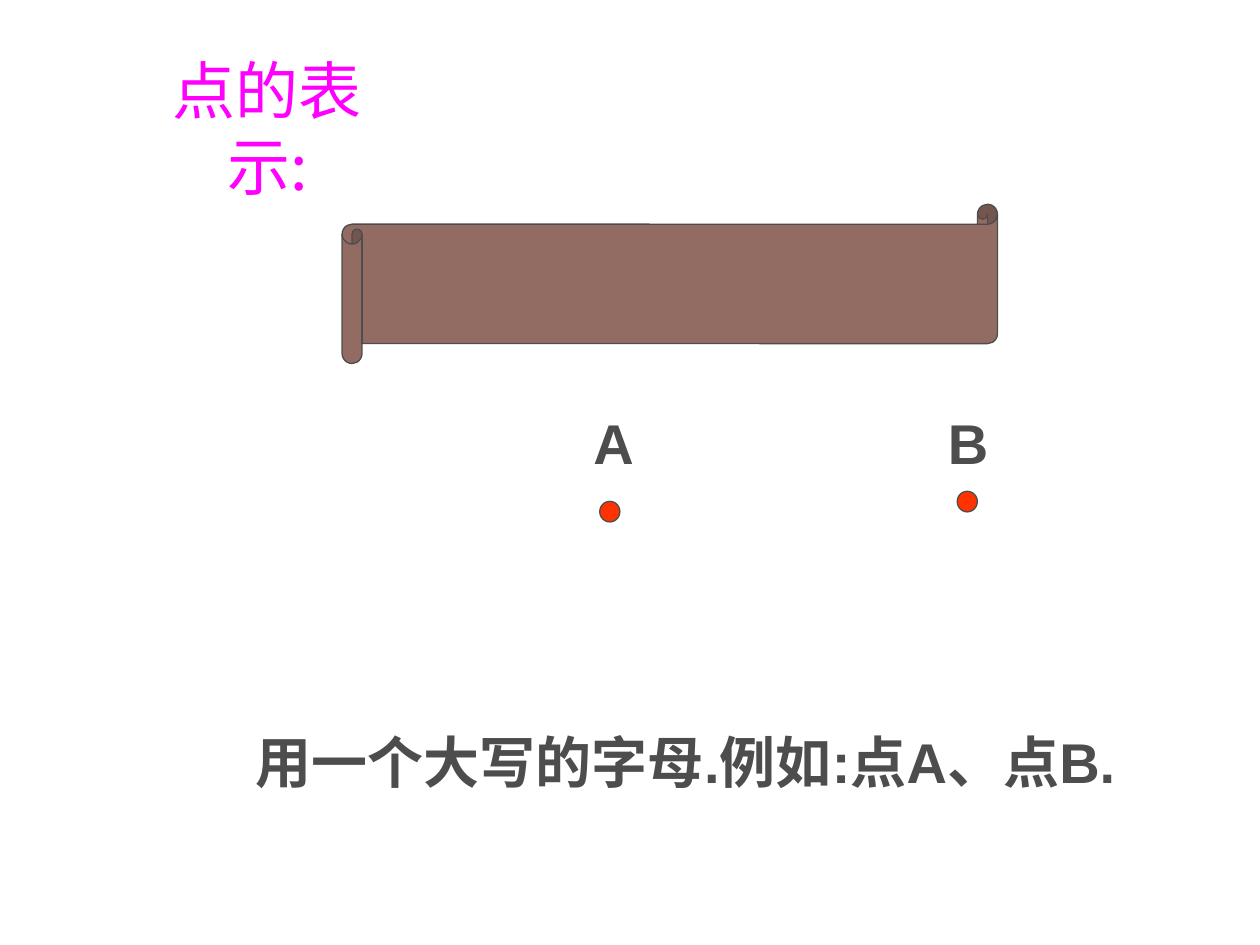
from lxml.etree import SubElement
from pptx import Presentation
from pptx.dml.color import RGBColor
from pptx.enum.shapes import MSO_SHAPE
from pptx.enum.text import MSO_ANCHOR, MSO_AUTO_SIZE, PP_ALIGN
from pptx.oxml.ns import qn
from pptx.util import Pt

GREY = RGBColor(0x4D, 0x4D, 0x4D)
RED = RGBColor(0xFF, 0x33, 0x00)
MAGENTA = RGBColor(0xFF, 0x00, 0xFF)
BROWN = RGBColor(0x92, 0x6C, 0x62)
CJK_FONT = "Noto Sans CJK SC"
LABEL = {"name": "Arial", "size": Pt(32), "bold": True}
HEADING = {"name": CJK_FONT, "size": Pt(36), "bold": False}


def write_text(box, text, style, color, wrap=True):
    frame = box.text_frame
    frame.word_wrap = wrap
    frame.auto_size = MSO_AUTO_SIZE.NONE
    frame.vertical_anchor = MSO_ANCHOR.TOP
    span = frame.paragraphs[0].add_run()
    span.text = text
    for name, value in style.items():
        setattr(span.font, name, value)
    span.font.color.rgb = color
    SubElement(span.font._element, qn("a:ea"), typeface=CJK_FONT)


def add_filled(kind, left, top, width, height, color):
    shape = page.shapes.add_shape(kind, Pt(left), Pt(top), Pt(width), Pt(height))
    shape.shadow.inherit = False
    shape.fill.solid()
    shape.fill.fore_color.rgb = color
    shape.line.color.rgb = GREY
    shape.line.width = Pt(0.75)
    return shape


deck = Presentation()
deck.slide_width, deck.slide_height = Pt(720), Pt(540)
page = deck.slides.add_slide(deck.slide_layouts[5])

title = page.shapes.title
title.left, title.top, title.width, title.height = Pt(76.5), Pt(26), Pt(152.5), Pt(85)
write_text(title, "点的表示:", HEADING, MAGENTA, wrap=False)
title.text_frame.paragraphs[0].alignment = PP_ALIGN.CENTER

sentence = page.shapes.add_textbox(Pt(139), Pt(412), Pt(505.5), Pt(45.5))
write_text(sentence, "用一个大写的字母.例如:点A、点B.", LABEL, GREY)

# Each point: letter, dot left, dot top, label left, label width
points = [("A", 342.75, 286.5, 332, 36), ("B", 547, 280.75, 534.5, 37.5)]
for letter, dot_left, dot_top, label_left, label_width in points:
    add_filled(MSO_SHAPE.OVAL, dot_left, dot_top, 11.5, 11.75, RED)
    label = page.shapes.add_textbox(Pt(label_left), Pt(229.75), Pt(label_width), Pt(45.5))
    write_text(label, letter, LABEL, GREY, wrap=False)

scroll = add_filled(MSO_SHAPE.HORIZONTAL_SCROLL, 195.5, 116.75, 374.5, 91, BROWN)
scroll.adjustments[0] = 0.125

deck.save("out.pptx")
